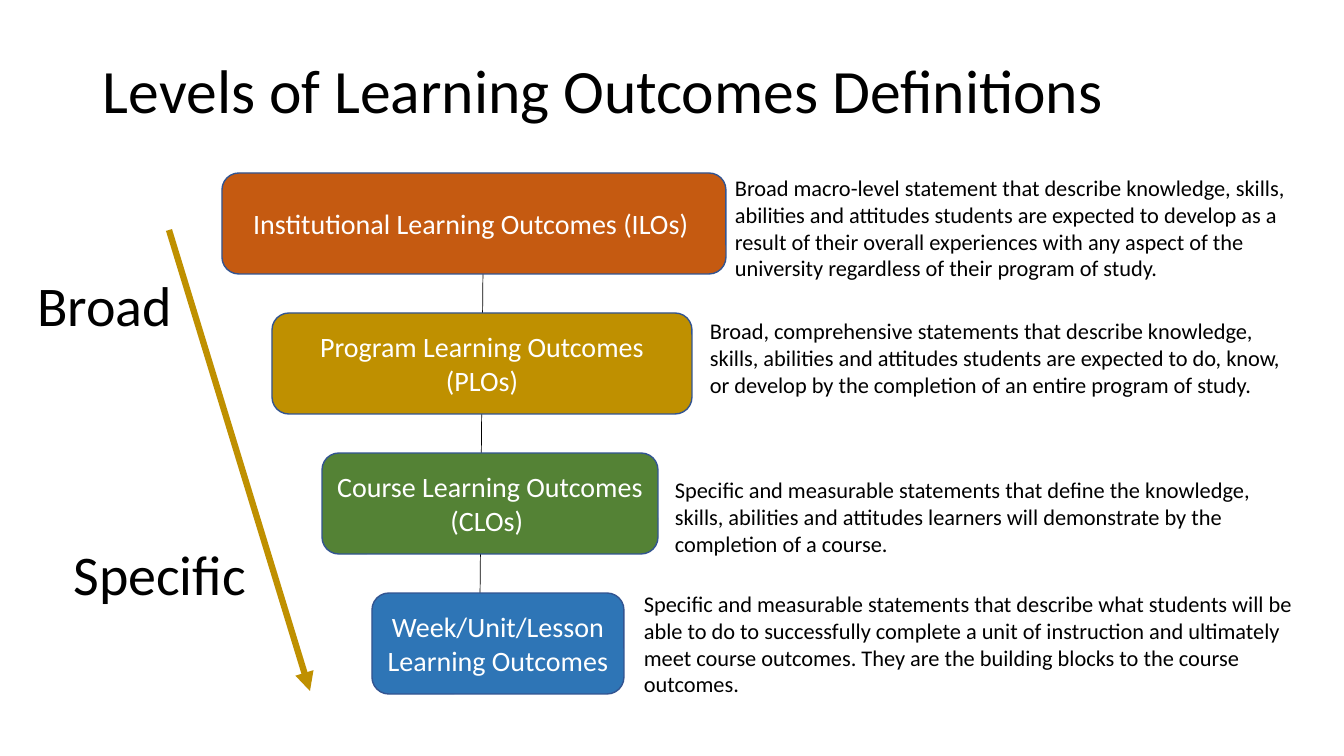
"""Build the slide that defines four levels of learning outcomes."""
from lxml.etree import SubElement
from pptx import Presentation
from pptx.dml.color import RGBColor
from pptx.enum.shapes import MSO_CONNECTOR as Connector, MSO_SHAPE as Shape
from pptx.enum.text import MSO_ANCHOR as Anchor, PP_ALIGN as Align
from pptx.oxml.ns import qn
from pptx.util import Emu, Pt

EMU_PER_INCH, PX_PER_INCH = 914400, 100.8
SLIDE_SIZE = (1344, 756)
FONT, BLACK, WHITE, OUTLINE, GOLD = "Calibri", "000000", "FFFFFF", "325491", "BF9000"

TITLE = ("Levels of Learning Outcomes Definitions", (93, 40, 1159, 107))
LEVELS = [
    ("Institutional Learning Outcomes (ILOs) ", "C55A11", (725, 169, 119),
     "Broad macro-level statement that describe knowledge, skills, abilities and attitudes "
     "students are expected to develop as a result of their overall experiences with any "
     "aspect of the university regardless of their program of study."),
    ("Program Learning Outcomes (PLOs)", GOLD, (700, 312, 92),
     "Broad, comprehensive statements that describe knowledge, skills, abilities and attitudes "
     "students are expected to do, know, or develop by the completion of an entire program of study."),
    ("Course Learning Outcomes\n(CLOs) ", "548235", (665, 471, 92),
     "Specific and measurable statements that define the knowledge, skills, abilities and "
     "attitudes learners will demonstrate by the completion of a course."),
    ("Week/Unit/Lesson Learning Outcomes", "2E75B6", (634, 585, 119),
     "Specific and measurable statements that describe what students will be able to do to "
     "successfully complete a unit of instruction and ultimately meet course outcomes. "
     "They are the building blocks to the course outcomes."),
]
SCALE_LABELS = [("Broad", (0, 266, 182, 78)), ("Specific", (52, 535, 204, 78))]
SPINE = (483, 271, 480, 602)
ARROW = (169, 230, 310, 691)

FIRST_LEFT, FIRST_TOP, FIRST_WIDTH, BOX_HEIGHT = 222, 173, 504, 101
LEFT_STEP, TOP_STEP, WIDTH_STEP = 50, 140, 84
NOTES_RIGHT = 1309


def px(length):
    return Emu(round(length * EMU_PER_INCH / PX_PER_INCH))


def color(value):
    return RGBColor.from_string(value)


def write(shape, text, size, text_color=BLACK, align=Align.LEFT, anchor=Anchor.TOP):
    frame = shape.text_frame
    frame.word_wrap = True
    frame.vertical_anchor = anchor
    frame.text = text
    for paragraph in frame.paragraphs:
        paragraph.alignment = align
        for run in paragraph.runs:
            run.font.name = FONT
            run.font.size = Pt(size)
            run.font.color.rgb = color(text_color)


def add_text(slide, text, bounds, size, **style):
    box = slide.shapes.add_textbox(*map(px, bounds))
    write(box, text, size, **style)
    return box


def add_line(slide, ends, line_color, width):
    connector = slide.shapes.add_connector(Connector.STRAIGHT, *map(px, ends))
    connector.line.color.rgb = color(line_color)
    connector.line.width = Pt(width)
    SubElement(connector.element.spPr, qn("a:effectLst"))
    return connector


def add_level(slide, index, name, fill, note_place, note):
    bounds = (FIRST_LEFT + index * LEFT_STEP, FIRST_TOP + index * TOP_STEP,
              FIRST_WIDTH - index * WIDTH_STEP, BOX_HEIGHT)
    box = slide.shapes.add_shape(Shape.ROUNDED_RECTANGLE, *map(px, bounds))
    box.shadow.inherit = False
    box.fill.solid()
    box.fill.fore_color.rgb = color(fill)
    box.line.color.rgb = color(OUTLINE)
    box.line.width = Pt(1)
    write(box, name, 20, WHITE, Align.CENTER, Anchor.MIDDLE)
    left, top, height = note_place
    add_text(slide, note, (left, top, NOTES_RIGHT - left, height), 16)


def main():
    presentation = Presentation()
    presentation.slide_width, presentation.slide_height = map(px, SLIDE_SIZE)
    slide = presentation.slides.add_slide(presentation.slide_layouts[6])

    add_line(slide, SPINE, BLACK, 0.5)
    title = add_text(slide, *TITLE, 44, anchor=Anchor.MIDDLE)
    title.text_frame.paragraphs[0].line_spacing = 0.9
    for index, level in enumerate(LEVELS):
        add_level(slide, index, *level)
    arrow = add_line(slide, ARROW, GOLD, 4.5)
    SubElement(arrow.line._get_or_add_ln(), qn("a:tailEnd"), type="triangle")
    for text, bounds in SCALE_LABELS:
        add_text(slide, text, bounds, 40, align=Align.RIGHT)

    presentation.save("out.pptx")


if __name__ == "__main__":
    main()
